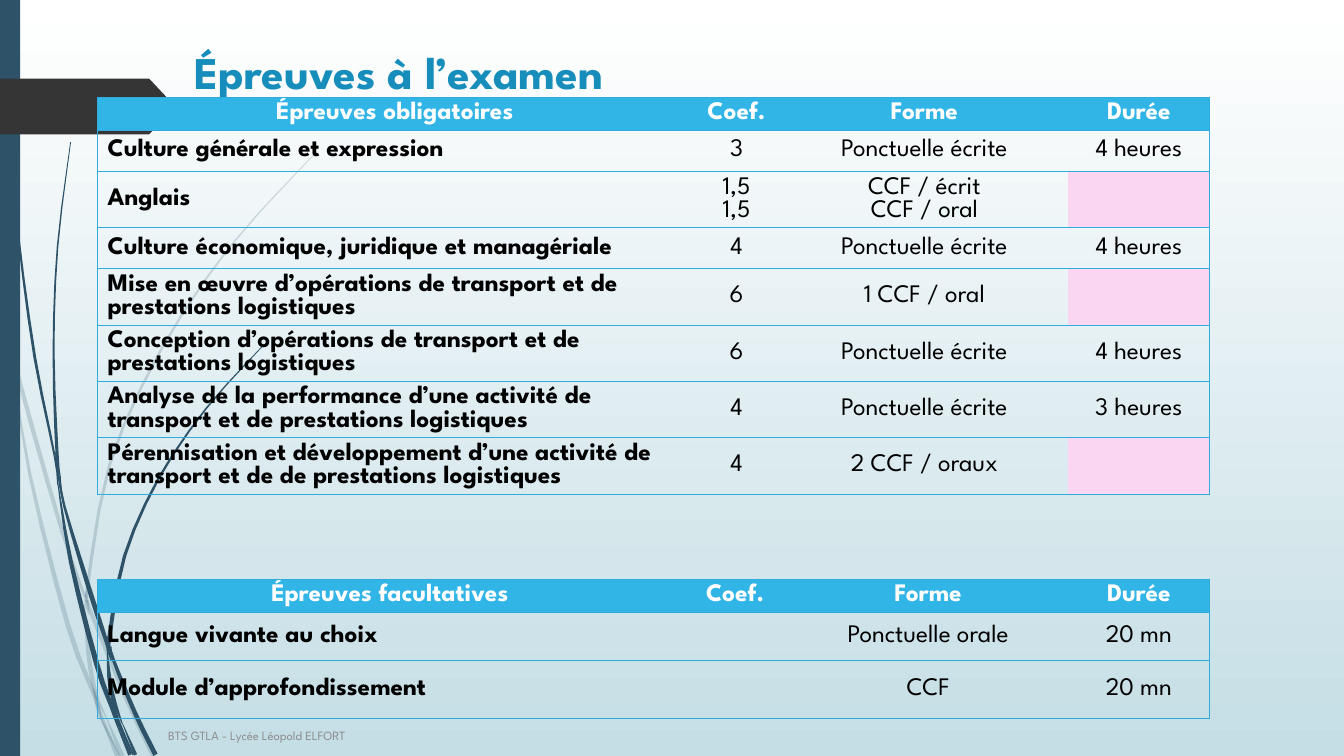
import dataclasses
import math

import lxml.etree
import pptx
import pptx.dml.color
import pptx.enum.shapes
import pptx.enum.text
import pptx.oxml.ns
import pptx.util

Cm = pptx.util.Cm
Pt = pptx.util.Pt
RGBColor = pptx.dml.color.RGBColor
Align = pptx.enum.text.PP_ALIGN
Anchor = pptx.enum.text.MSO_ANCHOR
Preset = pptx.enum.shapes.MSO_SHAPE
qn = pptx.oxml.ns.qn

FONT = "League Spartan"
WHITE = RGBColor(0xFF, 0xFF, 0xFF)
BLACK = RGBColor(0x00, 0x00, 0x00)
PALE_BLUE = RGBColor(0xC5, 0xDE, 0xE5)
NAVY = RGBColor(0x2E, 0x53, 0x69)
CHARCOAL = RGBColor(0x35, 0x35, 0x35)
TITLE_BLUE = RGBColor(0x17, 0x8D, 0xBB)
HEADER_BLUE = RGBColor(0x31, 0xB4, 0xE6)
BORDER_BLUE = RGBColor(0x2F, 0xAC, 0xDC)
PINK = RGBColor(0xFA, 0xD6, 0xF2)
GREY = RGBColor(0x8C, 0x8C, 0x8C)
STEPS = 3
LINE_SPACING = Pt(16.5)

Blade = list[tuple[float, float, float]]


@dataclasses.dataclass
class ExamTable:
    top: float
    widths: list[float]
    heights: list[float]
    rows: list[list[str]]
    pink_rows: tuple[int, ...] = ()


PALE_BLADES: list[Blade] = [
    [(0, 7.39, .1), (.13, 8.05, .08), (.27, 8.89, .02)],
    [(.36, 8.76, .02), (.48, 9.55, .1), (1.52, 13.23, .1), (2.14, 15.05, .06)],
    [(2.24, 15.14, .02), (2.28, 15.4, .09), (3.18, 17.6, .1), (3.87, 19.05, .12)],
    [(2.67, 18.06, .02), (3.08, 19.05, .12)],
    [(.28, 8.89, .02), (.75, 11.94, .08), (1.71, 15.75, .12), (2.37, 17.5, .1), (2.57, 18.14, .02)],
    [(2.13, 15.21, .02), (2.22, 16.41, .1), (2.4, 17.45, .1), (2.67, 18.06, .02)],
    [(7.92, 3.89, .02), (5.8, 6.21, .04), (4.04, 8.85, .06), (2.76, 11.72, .07),
     (2.2, 14.83, .08), (2.22, 15.14, .02)],
    [(2.57, 18.14, .02), (2.96, 19.05, .12)],
    [(2.17, 14.88, .02), (2.19, 15.2, .1), (2.24, 15.49, .02)],
    [(2.36, 17.35, .02), (2.52, 18, .1), (3.02, 19.05, .02)],
]

DARK_BLADES: list[Blade] = [
    [(.09, 0, .02), (.19, 2.79, .03), (.46, 5.91, .05), (.88, 9.02, .07),
     (1.38, 11.5, .05), (1.45, 12.22, .02)],
    [(1.52, 11.99, .02), (1.62, 12.75, .06), (2.3, 15.01, .12), (2.69, 16.2, .09), (2.69, 16.38, .02)],
    [(2.8, 16.28, .02), (2.85, 16.6, .08), (3.4, 17.96, .11), (3.92, 19.02, .12)],
    [(1.45, 12.12, .02), (1.78, 14.13, .1), (2.43, 16.71, .13), (2.8, 17.78, .1), (2.97, 18.34, .02)],
    [(1.78, 3.58, .02), (1.45, 6.22, .04), (1.35, 8.86, .05), (1.44, 11.46, .08), (1.52, 11.99, .02)],
    [(3.1, 18.26, .02), (3.42, 19.02, .08)],
    [(1.4, 11.4, .02), (1.51, 12.2, .06), (1.63, 12.83, .02)],
    [(6.6, 8.74, .02), (5.19, 10.3, .04), (3.99, 12.07, .06), (3.14, 14.01, .08),
     (2.76, 16.03, .1), (2.79, 16.28, .02)],
    [(2.97, 18.34, .02), (3.28, 19.02, .1)],
    [(2.7, 16.38, .02), (2.8, 17.4, .12), (3.09, 18.26, .02)],
    [(2.7, 16.03, .02), (2.74, 16.35, .1), (2.81, 16.66, .02)],
    [(2.8, 17.55, .02), (2.98, 18.2, .1), (3.36, 19.02, .04)],
]

TABLES = [
    ExamTable(2.45, [14.98, 2.24, 7.23, 3.58],
              [.84, 1.03, 1.42, 1.03, 1.42, 1.42, 1.42, 1.42],
              [["Épreuves obligatoires", "Coef.", "Forme", "Durée"],
               ["Culture générale et expression", "3", "Ponctuelle écrite", "4 heures"],
               ["Anglais", "1,5\n1,5", "CCF / écrit\nCCF / oral", ""],
               ["Culture économique, juridique et managériale", "4", "Ponctuelle écrite", "4 heures"],
               ["Mise en œuvre d’opérations de transport et de prestations logistiques",
                "6", "1 CCF / oral", ""],
               ["Conception d’opérations de transport et de prestations logistiques",
                "6", "Ponctuelle écrite", "4 heures"],
               ["Analyse de la performance d’une activité de transport et de prestations logistiques",
                "4", "Ponctuelle écrite", "3 heures"],
               ["Pérennisation et développement d’une activité de transport et de de prestations logistiques",
                "4", "2 CCF / oraux", ""]],
              (2, 4, 7)),
    ExamTable(14.6, [14.73, 2.67, 7.06, 3.56], [.84, 1.21, 1.45],
              [["Épreuves facultatives", "Coef.", "Forme", "Durée"],
               ["Langue vivante au choix", "", "Ponctuelle orale", "20 mn"],
               ["Module d’approfondissement", "", "CCF", "20 mn"]]),
]


def add_run(paragraph, text: str, size: float, color: RGBColor, bold: bool = False) -> None:
    run = paragraph.add_run()
    run.text = text
    run.font.name = FONT
    run.font.size = Pt(size)
    run.font.bold = bold
    run.font.color.rgb = color


def paint(shape, color: RGBColor) -> None:
    shape.shadow.inherit = False
    shape.fill.solid()
    shape.fill.fore_color.rgb = color
    shape.line.fill.background()


def smooth(points: Blade) -> Blade:
    padded = [points[0], *points, points[-1]]
    curve = []
    for a, b, c, d in zip(padded, padded[1:], padded[2:], padded[3:]):
        for step in range(STEPS):
            t = step / STEPS
            curve.append(tuple(
                q + t / 2 * (r - p + t * (2 * p - 5 * q + 4 * r - s + t * (3 * (q - r) + s - p)))
                for p, q, r, s in zip(a, b, c, d)))
    return curve + [points[-1]]


def draw_blade(slide, blade: Blade, opacity: int) -> None:
    curve = smooth(blade) if len(blade) > 2 else blade
    left, right = [], []
    for index, (x, y, width) in enumerate(curve):
        before, after = curve[max(index - 1, 0)], curve[min(index + 1, len(curve) - 1)]
        dx, dy = after[0] - before[0], after[1] - before[1]
        half = width / 2 / math.hypot(dx, dy)
        left.append((x - dy * half, y + dx * half))
        right.append((x + dy * half, y - dx * half))
    outline = [(Cm(x), Cm(y)) for x, y in left + right[::-1]]
    builder = slide.shapes.build_freeform(*outline[0])
    builder.add_line_segments(outline[1:], close=True)
    shape = builder.convert_to_shape()
    paint(shape, NAVY)
    if opacity < 100:
        color = shape.fill._xPr.find(".//" + qn("a:srgbClr"))
        lxml.etree.SubElement(color, qn("a:alpha"), val=str(opacity * 1000))


def set_borders(cell, visible: str) -> None:
    properties = cell._tc.get_or_add_tcPr()
    for index, side in enumerate("LRTB"):
        line = lxml.etree.Element(qn(f"a:ln{side}"), w=str(Pt(0.75)))
        if side in visible:
            fill = lxml.etree.SubElement(line, qn("a:solidFill"))
            lxml.etree.SubElement(fill, qn("a:srgbClr"), val=str(BORDER_BLUE))
        else:
            lxml.etree.SubElement(line, qn("a:noFill"))
        properties.insert(index, line)


def draw_table(slide, exam: ExamTable) -> None:
    frame = slide.shapes.add_table(len(exam.rows), len(exam.widths), Cm(2.46), Cm(exam.top),
                                   Cm(sum(exam.widths)), Cm(sum(exam.heights)))
    table = frame.table
    table.horz_banding = False
    for column, width in zip(table.columns, exam.widths):
        column.width = Cm(width)
    last = len(exam.widths) - 1
    for row_index, texts in enumerate(exam.rows):
        table.rows[row_index].height = Cm(exam.heights[row_index])
        header = row_index == 0
        for column_index, text in enumerate(texts):
            cell = table.cell(row_index, column_index)
            set_borders(cell, "TB" + "L" * (column_index == 0) + "R" * (column_index == last))
            cell.vertical_anchor = Anchor.TOP if header else Anchor.MIDDLE
            pink = column_index == last and row_index in exam.pink_rows
            if header or pink:
                cell.fill.solid()
                cell.fill.fore_color.rgb = HEADER_BLUE if header else PINK
            else:
                cell.fill.background()
            if not text:
                continue
            for line_index, line in enumerate(text.split("\n")):
                body = cell.text_frame
                paragraph = body.add_paragraph() if line_index else body.paragraphs[0]
                paragraph.alignment = Align.CENTER if header or column_index else Align.LEFT
                paragraph.line_spacing = LINE_SPACING
                add_run(paragraph, line, 18, WHITE if header else BLACK, header or column_index == 0)


def main() -> None:
    presentation = pptx.Presentation()
    presentation.slide_width, presentation.slide_height = Cm(33.87), Cm(19.05)
    slide = presentation.slides.add_slide(presentation.slide_layouts[5])

    background = slide.background.fill
    background.gradient()
    background.gradient_angle = 270
    for stop, color, position in zip(background.gradient_stops, (WHITE, PALE_BLUE), (0, 1)):
        stop.color.rgb = color
        stop.position = position

    for blades, opacity in ((PALE_BLADES, 20), (DARK_BLADES, 100)):
        for blade in blades:
            draw_blade(slide, blade, opacity)
    side_bar = slide.shapes.add_shape(Preset.RECTANGLE, Cm(0), Cm(0), Cm(.51), Cm(19.05))
    paint(side_bar, NAVY)
    tag = slide.shapes.add_shape(Preset.PENTAGON, Cm(0), Cm(1.98), Cm(4.42), Cm(1.41))
    tag.adjustments[0] = 0.47
    paint(tag, CHARCOAL)

    title = slide.shapes.title
    title.left, title.top, title.width, title.height = Cm(4.65), Cm(1.02), Cm(12.65), Cm(1.75)
    title.text_frame.auto_size = pptx.enum.text.MSO_AUTO_SIZE.NONE
    title.text_frame.vertical_anchor = Anchor.MIDDLE
    title.text_frame.margin_bottom = Cm(.33)
    title.text_frame.paragraphs[0].alignment = Align.LEFT
    add_run(title.text_frame.paragraphs[0], "Épreuves à l’examen", 32.4, TITLE_BLUE, True)

    footer = slide.shapes.add_textbox(Cm(3.99), Cm(18.03), Cm(21.16), Cm(1.02))
    footer.text_frame.word_wrap = True
    footer.text_frame.vertical_anchor = Anchor.MIDDLE
    add_run(footer.text_frame.paragraphs[0], "BTS GTLA - Lycée Léopold ELFORT", 9, GREY)

    for exam in TABLES:
        draw_table(slide, exam)
    presentation.save("out.pptx")


if __name__ == "__main__":
    main()
